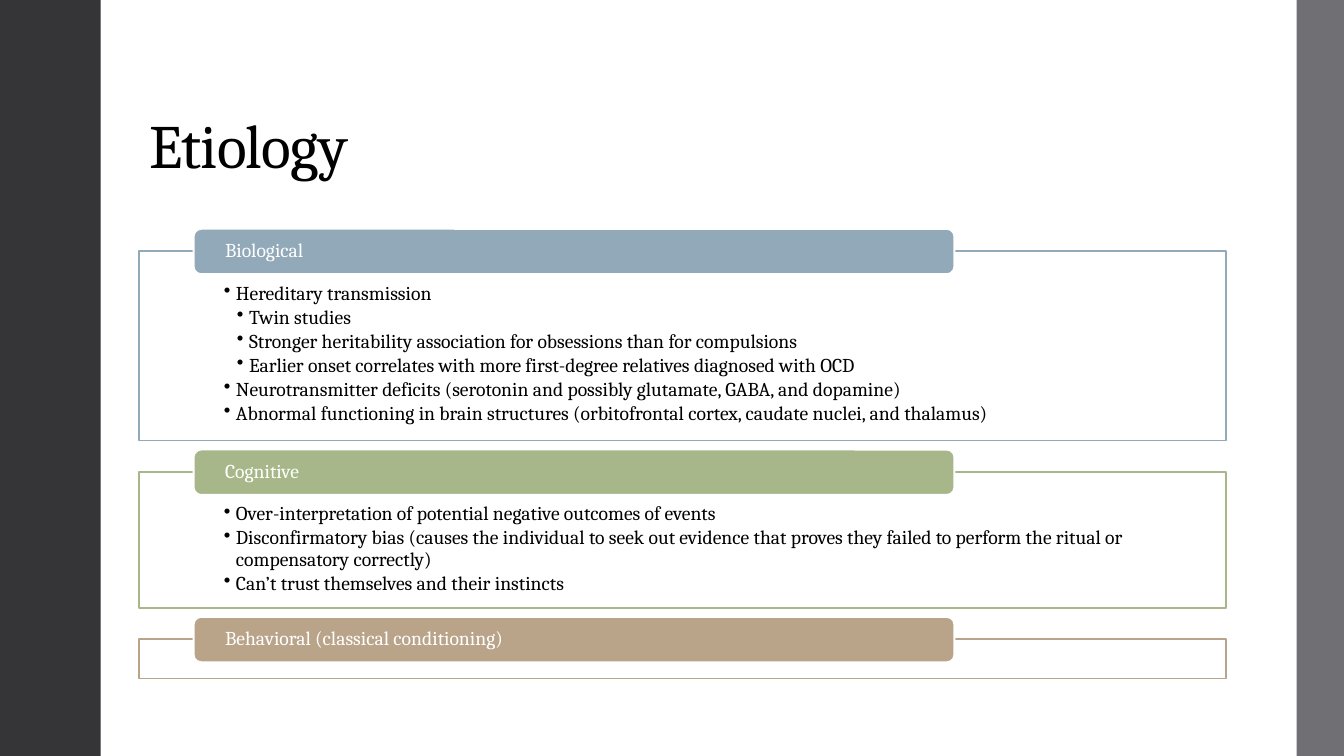
from pptx import Presentation
from pptx.dml.color import RGBColor
from pptx.enum.shapes import MSO_SHAPE as Shape
from pptx.enum.text import MSO_ANCHOR as Anchor, PP_ALIGN as Align
from pptx.oxml.ns import qn
from pptx.util import Inches, Pt

BLACK = RGBColor(0x00, 0x00, 0x00)
WHITE = RGBColor(0xFF, 0xFF, 0xFF)
DARK = RGBColor(0x35, 0x35, 0x37)
GRAY = RGBColor(0x6F, 0x6F, 0x74)
BLUE = RGBColor(0x92, 0xA9, 0xB9)
GREEN = RGBColor(0xA7, 0xB7, 0x89)
TAN = RGBColor(0xB9, 0xA4, 0x89)

FONT = "Cambria"
LEFT, WIDTH = 1.38, 10.78
GAP = 0.31

# Color, heading, panel height, (level, text) items
PANELS = [
    (BLUE, "Biological", 1.88, [
        (0, "Hereditary transmission"),
        (1, "Twin studies"),
        (1, "Stronger heritability association for obsessions than for compulsions"),
        (1, "Earlier onset correlates with more first-degree relatives diagnosed with OCD"),
        (0, "Neurotransmitter deficits (serotonin and possibly glutamate, GABA, and dopamine)"),
        (0, "Abnormal functioning in brain structures (orbitofrontal cortex, "
            "caudate nuclei, and thalamus)"),
    ]),
    (GREEN, "Cognitive", 1.35, [
        (0, "Over-interpretation of potential negative outcomes of events"),
        (0, "Disconfirmatory bias (causes the individual to seek out evidence that proves "
            "they failed to perform the ritual or compensatory correctly)"),
        (0, "Can’t trust themselves and their instincts"),
    ]),
    (TAN, "Behavioral (classical conditioning)", 0.39, []),
]


def setup(obj, **values):
    for name, value in values.items():
        setattr(obj, name, value)


def add_box(slide, kind, box, fill, line=None, weight=1):
    shape = slide.shapes.add_shape(kind, *map(Inches, box))
    shape.shadow.inherit = False
    shape.fill.solid()
    shape.fill.fore_color.rgb = fill
    if line is None:
        shape.line.fill.background()
    else:
        shape.line.color.rgb = line
        shape.line.width = Pt(weight)
    return shape


def set_frame(frame, anchor, left, top, right, bottom):
    setup(frame, word_wrap=True, vertical_anchor=anchor,
          margin_left=Inches(left), margin_top=Inches(top),
          margin_right=Inches(right), margin_bottom=Inches(bottom))


def write(para, text, size, color, after=0):
    setup(para, alignment=Align.LEFT, line_spacing=0.9, space_after=Pt(after))
    run = para.add_run()
    run.text = text
    setup(run.font, name=FONT, size=Pt(size))
    run.font.color.rgb = color
    return run


def add_bullet(para, level):
    para.level = level
    props = para._p.get_or_add_pPr()
    props.set("marL", str(Inches(0.12 + 0.13 * level)))
    props.set("indent", str(Inches(-0.12)))
    mark = props.makeelement(qn("a:buChar"), {"char": "•"})
    props.append(mark)


def add_bars(slide):
    add_box(slide, Shape.RECTANGLE, (0, 0, 1, 7.5), DARK)
    add_box(slide, Shape.RECTANGLE, (12.86, 0, 0.5, 7.5), GRAY)


def add_title(slide, box, text):
    frame = slide.shapes.add_textbox(*map(Inches, box)).text_frame
    set_frame(frame, Anchor.BOTTOM, 0.1, 0.05, 0.1, 0.05)
    run = write(frame.paragraphs[0], text, 44, BLACK)
    run.font._element.set("spc", "-50")


def add_panel(slide, box, color, heading, items):
    left, top, width, height = box

    # Outlined body with its bullets
    body = add_box(slide, Shape.RECTANGLE, box, WHITE, color, 1.1)
    frame = body.text_frame
    set_frame(frame, Anchor.TOP, 0.84, 0.32, 0.84, 0.11)
    for num, (level, text) in enumerate(items):
        para = frame.add_paragraph() if num else frame.paragraphs[0]
        write(para, text, 14, BLACK, 2)
        add_bullet(para, level)

    # Heading tab over the top edge
    tab_box = (left + 0.54, top - 0.22, width * 0.7, 0.45)
    tab = add_box(slide, Shape.ROUNDED_RECTANGLE, tab_box, color, WHITE, 1.35)
    set_frame(tab.text_frame, Anchor.MIDDLE, 0.29, 0, 0.29, 0)
    write(tab.text_frame.paragraphs[0], heading, 14, WHITE)


def main():
    deck = Presentation()
    setup(deck, slide_width=Inches(13.33), slide_height=Inches(7.5))
    slide = deck.slides.add_slide(deck.slide_layouts[6])
    add_bars(slide)
    add_title(slide, (LEFT, 0.4, WIDTH, 1.45), "Etiology")
    top = 2.49
    for color, heading, height, items in PANELS:
        add_panel(slide, (LEFT, top, WIDTH, height), color, heading, items)
        top += height + GAP
    deck.save("out.pptx")


if __name__ == "__main__":
    main()
